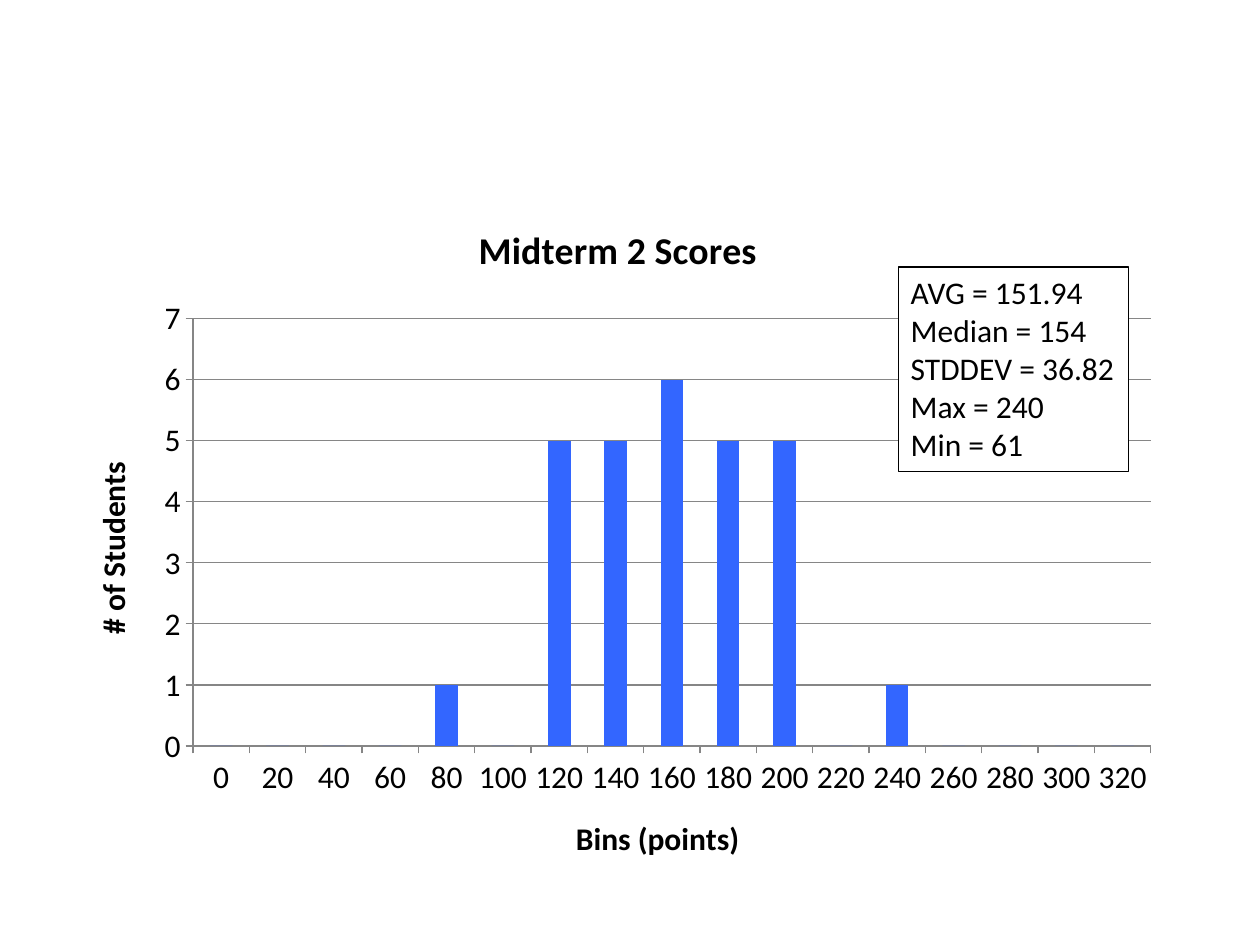
from pptx import Presentation
from pptx.chart.data import CategoryChartData
from pptx.dml.color import RGBColor
from pptx.enum.chart import XL_CHART_TYPE, XL_TICK_MARK
from pptx.enum.shapes import MSO_SHAPE
from pptx.enum.text import MSO_ANCHOR, MSO_AUTO_SIZE, PP_ALIGN
from pptx.util import Inches, Pt

FONT = "Calibri"
COUNTS = [0, 0, 0, 0, 1, 0, 5, 5, 6, 5, 5, 0, 1, 0, 0, 0, 0]
BIN_WIDTH = 20
STATS = ["AVG = 151.94", "Median = 154", "STDDEV = 36.82", "Max = 240", "Min = 61"]


def rgb(value):
    return RGBColor.from_string(value)


def style_font(font, size=18, bold=False):
    font.name = FONT
    font.size = Pt(size)
    font.bold = bold
    font.color.rgb = rgb("000000")


def set_title(owner, text, size=18):
    owner.has_title = True
    tf = owner.chart_title.text_frame if hasattr(owner, "chart_title") else owner.axis_title.text_frame
    tf.text = text
    style_font(tf.paragraphs[0].runs[0].font, size, True)


def style_axis(axis, title):
    set_title(axis, title)
    axis.major_tick_mark = XL_TICK_MARK.OUTSIDE
    axis.minor_tick_mark = XL_TICK_MARK.NONE
    axis.format.line.color.rgb = rgb("868686")
    axis.format.line.width = Pt(0.75)
    style_font(axis.tick_labels.font)


def add_histogram(slide, left, top, width, height):
    data = CategoryChartData()
    data.categories = [str(i * BIN_WIDTH) for i in range(len(COUNTS))]
    data.add_series("Series 1", COUNTS)
    chart = slide.shapes.add_chart(
        XL_CHART_TYPE.COLUMN_CLUSTERED, left, top, width, height, data).chart
    style_font(chart.font)
    chart.has_legend = False
    chart.has_title = True
    tf = chart.chart_title.text_frame
    tf.text = "Midterm 2 Scores"
    style_font(tf.paragraphs[0].runs[0].font, 21.6, True)
    chart.chart_title.include_in_layout = False

    style_axis(chart.category_axis, "Bins (points)")
    style_axis(chart.value_axis, "# of Students")
    chart.value_axis.minimum_scale = 0
    chart.value_axis.maximum_scale = 7
    chart.value_axis.major_unit = 1
    grid = chart.value_axis.major_gridlines.format.line
    grid.color.rgb = rgb("868686")
    grid.width = Pt(0.75)

    plot = chart.plots[0]
    plot.gap_width = 150
    plot.vary_by_categories = False
    fill = plot.series[0].format.fill
    fill.solid()
    fill.fore_color.rgb = rgb("3366FF")


def add_stats_box(slide, lines, left, top, width, height):
    sp = slide.shapes.add_shape(MSO_SHAPE.RECTANGLE, left, top, width, height)
    sp.shadow.inherit = False
    sp.fill.solid()
    sp.fill.fore_color.rgb = rgb("FFFFFF")
    sp.line.color.rgb = rgb("000000")
    sp.line.width = Pt(0.75)
    tf = sp.text_frame
    tf.text = "\n".join(lines)
    tf.word_wrap = False
    tf.auto_size = MSO_AUTO_SIZE.SHAPE_TO_FIT_TEXT
    tf.vertical_anchor = MSO_ANCHOR.TOP
    for p in tf.paragraphs:
        p.alignment = PP_ALIGN.LEFT
        style_font(p.runs[0].font)


def main():
    prs = Presentation()
    prs.slide_width, prs.slide_height = Inches(10), Inches(7.5)
    slide = prs.slides.add_slide(prs.slide_layouts[6])
    add_histogram(slide, Inches(0.5), Inches(1.55), Inches(8.81), Inches(5.5))
    add_stats_box(slide, STATS, Inches(7.13), Inches(2.12), Inches(1.83), Inches(1.62))
    prs.save("out.pptx")


if __name__ == "__main__":
    main()
